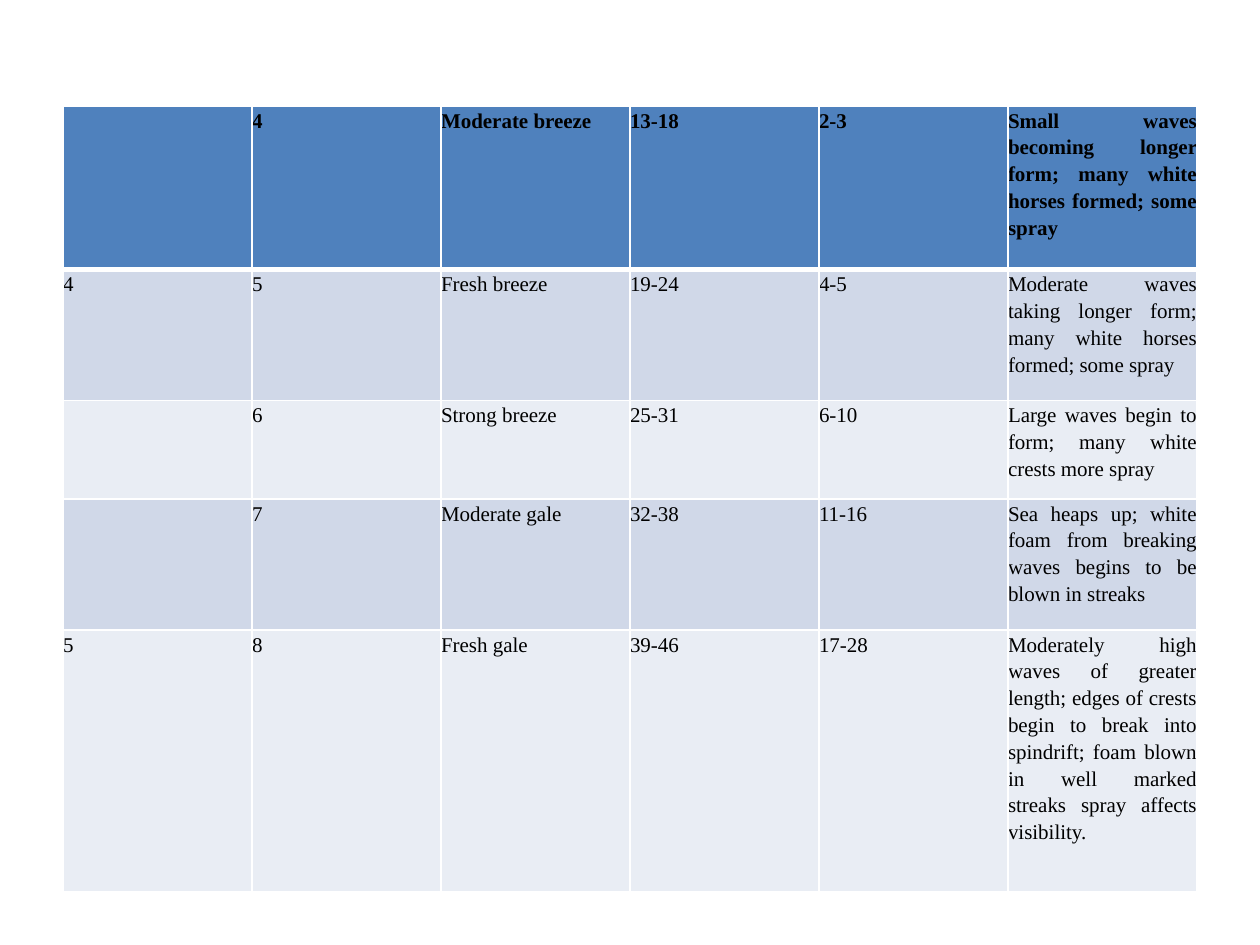
from lxml import etree
from pptx import Presentation
from pptx.dml.color import RGBColor
from pptx.enum import text
from pptx.oxml import ns
from pptx.util import Inches, Pt

ROWS = [
    ("", "4", "Moderate breeze", "13-18", "2-3",
     "Small waves becoming longer form; many white horses formed; some spray"),
    ("4", "5", "Fresh breeze", "19-24", "4-5",
     "Moderate waves taking longer form; many white horses formed; some spray"),
    ("", "6", "Strong breeze", "25-31", "6-10",
     "Large waves begin to form; many white crests more spray"),
    ("", "7", "Moderate gale", "32-38", "11-16",
     "Sea heaps up; white foam from breaking waves begins to be blown in streaks"),
    ("5", "8", "Fresh gale", "39-46", "17-28",
     "Moderately high waves of greater length; edges of crests begin to break "
     "into spindrift; foam blown in well marked streaks spray affects visibility."),
]
LINES = [5, 4, 3, 4, 8]
UNIT = 0.26
WIDTH = 9
HEAD, BANDS = "4F81BD", ("E9EDF4", "D0D8E8")
PARA = {"alignment": text.PP_ALIGN.JUSTIFY, "line_spacing": 1.15, "space_after": Pt(10)}
FONT = {"name": "Times New Roman", "size": Pt(12)}
INSET = dict.fromkeys(("margin_left", "margin_top", "margin_right", "margin_bottom"), 0)


def color(code):
    return RGBColor.from_string(code)


def put(item, style):
    for key, val in style.items():
        setattr(item, key, val)


def edge(cell, side, width):
    props = cell._tc.get_or_add_tcPr()
    line = etree.SubElement(props, ns.qn("a:ln" + side), w=str(Pt(width)))
    fill = etree.SubElement(line, ns.qn("a:solidFill"))
    etree.SubElement(fill, ns.qn("a:srgbClr"), val="FFFFFF")


def paint(cell, row, words):
    put(cell, INSET)
    for side in "LRTB":
        edge(cell, side, 3 if (row, side) in ((0, "B"), (1, "T")) else 1)
    cell.fill.solid()
    cell.fill.fore_color.rgb = color(BANDS[row % 2] if row else HEAD)
    if words:
        para = cell.text_frame.paragraphs[0]
        put(para, PARA)
        run = para.add_run()
        run.text = words
        put(run.font, {**FONT, "bold": row == 0})
        run.font.color.rgb = color("000000")


def main():
    deck = Presentation()
    put(deck, {"slide_width": Inches(10), "slide_height": Inches(7.5)})
    slide = deck.slides.add_slide(deck.slide_layouts[6])
    count = len(ROWS[0])
    grid = slide.shapes.add_table(
        len(ROWS), count, Inches(0.5), Inches(0.84), Inches(WIDTH), Inches(UNIT * sum(LINES))
    ).table
    for col in grid.columns:
        col.width = Inches(WIDTH / count)
    for r, (row, size) in enumerate(zip(ROWS, LINES)):
        grid.rows[r].height = Inches(UNIT * size)
        for c, words in enumerate(row):
            paint(grid.cell(r, c), r, words)
    deck.save("out.pptx")


if __name__ == "__main__":
    main()
